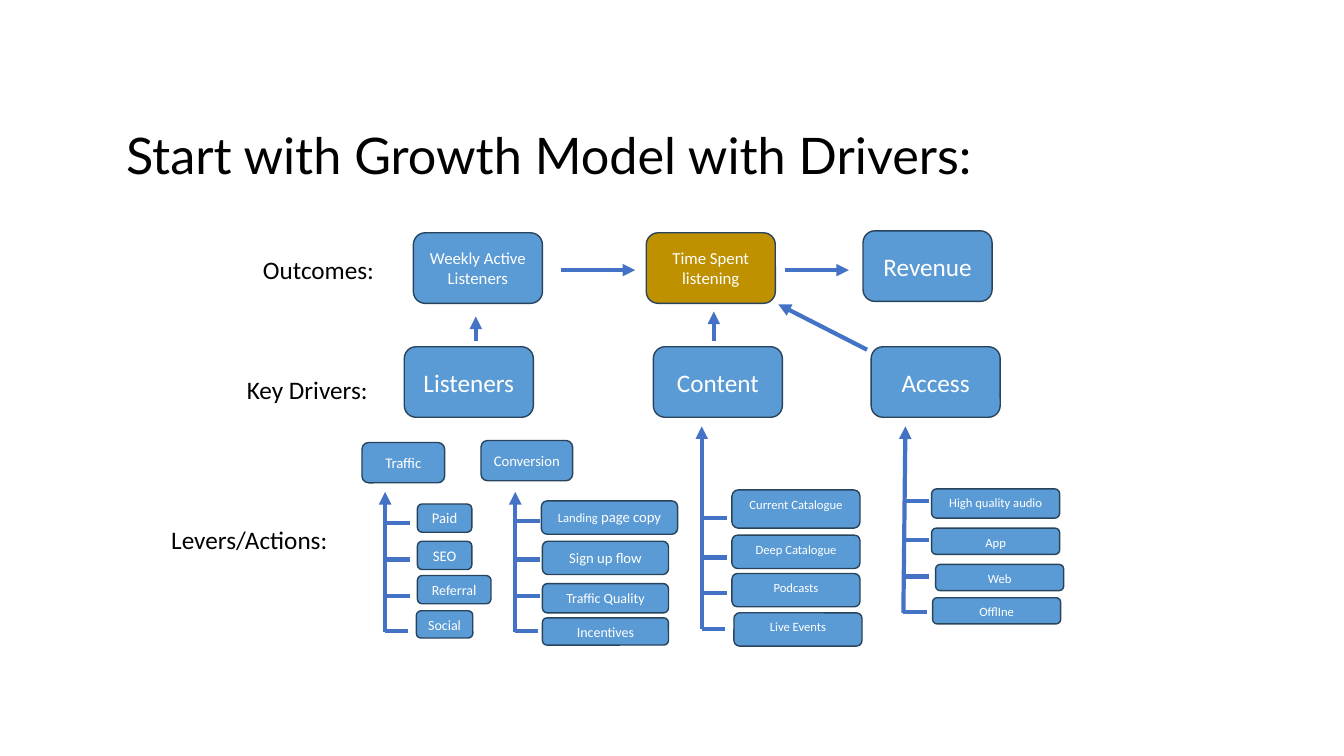
from dataclasses import dataclass

from lxml import etree
from pptx import Presentation
from pptx.dml.color import RGBColor
from pptx.enum.shapes import MSO_CONNECTOR, MSO_SHAPE
from pptx.enum.text import MSO_ANCHOR, MSO_AUTO_SIZE, PP_ALIGN
from pptx.oxml.ns import qn
from pptx.util import Pt

PX = 9144
BLUE = RGBColor(0x5B, 0x9B, 0xD5)
GOLD = RGBColor(0xBF, 0x90, 0x00)
EDGE = RGBColor(0x28, 0x44, 0x5D)
ARROW = RGBColor(0x44, 0x72, 0xC4)
WHITE = RGBColor(0xFF, 0xFF, 0xFF)
BLACK = RGBColor(0x00, 0x00, 0x00)
ROUNDED, STRAIGHT = MSO_SHAPE.ROUNDED_RECTANGLE, MSO_CONNECTOR.STRAIGHT
TOP, MIDDLE, BOTTOM = MSO_ANCHOR.TOP, MSO_ANCHOR.MIDDLE, MSO_ANCHOR.BOTTOM
LEFT, CENTER = PP_ALIGN.LEFT, PP_ALIGN.CENTER
NO_FIT = MSO_AUTO_SIZE.NONE
STUB = 23

Runs = list[tuple[str, float]]


@dataclass
class Box:
    runs: Runs
    x: int
    y: int
    w: int
    h: int
    anchor: MSO_ANCHOR = MIDDLE
    fill: RGBColor = BLUE


@dataclass
class Label:
    text: str
    x: int
    y: int
    w: int


@dataclass
class Line:
    x1: int
    y1: int
    x2: int
    y2: int
    arrow: bool = True


@dataclass
class Rail:
    foot_x: int
    foot_y: int
    head_x: int
    head_y: int
    stubs: list[int]


def driver(text: str, x: int, y: int, size: float = 18, fill: RGBColor = BLUE) -> Box:
    return Box([(text, size)], x, y, 128, 70, fill=fill)


def lever(text: str, x: int, y: int, h: int) -> Box:
    return Box([(text, 9)], x, y, 127, h, TOP)


BOXES = [
    driver("Listeners", 401, 344),
    driver("Content", 648, 344),
    driver("Access", 864, 344),
    driver("Weekly Active Listeners", 410, 231, 12),
    driver("Time Spent listening", 641, 231, 12, GOLD),
    driver("Revenue", 856, 229),
    Box([("Traffic", 10.5)], 359, 439, 82, 40),
    Box([("Conversion", 10.5)], 477, 437, 91, 40),
    Box([("Paid", 10.5)], 414, 500, 54, 28),
    Box([("SEO", 10.5)], 414, 537, 54, 28),
    Box([("Referra", 10), ("l", 10.5)], 414, 571, 73, 28),
    Box([("Social", 10)], 413, 606, 56, 27),
    Box([("Landing", 9), (" page copy", 10.5)], 537, 497, 135, 33, TOP),
    Box([("Sign up flow", 10.5)], 538, 537, 125, 33),
    Box([("Traffic Quality", 10)], 538, 579, 125, 29),
    Box([("Incentives", 10)], 538, 613, 125, 27),
    lever("Current Catalogue", 726, 486, 38),
    lever("Deep Catalogue", 726, 531, 33),
    lever("Podcasts", 726, 569, 33),
    lever("Live Events", 728, 608, 33),
    lever("High quality audio", 924, 485, 29),
    lever("App", 924, 524, 26),
    lever("Web", 928, 560, 26),
    lever("OfflIne", 925, 593, 26),
]
LABELS = [
    Label("Outcomes:", 251, 247, 132),
    Label("Key Drivers:", 235, 366, 141),
    Label("Levers/Actions:", 160, 515, 192),
]
ARROWS = [
    Line(556, 268, 630, 268),
    Line(779, 268, 842, 268),
    Line(472, 338, 472, 314),
    Line(708, 338, 708, 309),
    Line(860, 347, 772, 302),
]
RAILS = [
    Rail(382, 627, 382, 488, [519, 555, 591, 626]),
    Rail(511, 627, 511, 488, [517, 555, 591, 626]),
    Rail(696, 624, 696, 423, [514, 553, 588, 624]),
    Rail(896, 608, 898, 423, [497, 536, 572, 607]),
]


def write(tf, runs: Runs, *, font: str = "Calibri", color: RGBColor = WHITE,
          align: PP_ALIGN = CENTER, anchor: MSO_ANCHOR = MIDDLE,
          wrap: bool = True, spacing: float = 1.0) -> None:
    tf.auto_size = NO_FIT
    tf.word_wrap = wrap
    tf.vertical_anchor = anchor
    p = tf.paragraphs[0]
    p.alignment = align
    p.line_spacing = spacing
    for text, size in runs:
        r = p.add_run()
        r.text = text
        r.font.name = font
        r.font.size = Pt(size)
        r.font.color.rgb = color


def add_box(s, box: Box) -> None:
    sp = s.shapes.add_shape(ROUNDED, box.x * PX, box.y * PX, box.w * PX, box.h * PX)
    sp.shadow.inherit = False
    sp.fill.solid()
    sp.fill.fore_color.rgb = box.fill
    sp.line.color.rgb = EDGE
    sp.line.width = Pt(1)
    write(sp.text_frame, box.runs, anchor=box.anchor)


def add_label(s, label: Label) -> None:
    sp = s.shapes.add_textbox(label.x * PX, label.y * PX, label.w * PX, 40 * PX)
    write(sp.text_frame, [(label.text, 18)], color=BLACK, align=LEFT,
          anchor=TOP, wrap=False)


def add_line(s, line: Line) -> None:
    sp = s.shapes.add_connector(STRAIGHT, line.x1 * PX, line.y1 * PX,
                                line.x2 * PX, line.y2 * PX)
    sp.line.color.rgb = ARROW
    sp.line.width = Pt(3)
    props = sp._element.spPr
    if line.arrow:
        etree.SubElement(props.find(qn("a:ln")), qn("a:tailEnd"), type="triangle")
    etree.SubElement(props, qn("a:effectLst"))


def add_rail(s, rail: Rail) -> None:
    add_line(s, Line(rail.foot_x, rail.foot_y, rail.head_x, rail.head_y))
    for y in rail.stubs:
        x = rail.foot_x + (0 if y == rail.stubs[-1] else 2)
        add_line(s, Line(x, y, x + STUB, y, arrow=False))


def add_title(s, text: str) -> None:
    sp = s.shapes.title
    sp.left, sp.top, sp.width, sp.height = 115 * PX, 22 * PX, 1058 * PX, 167 * PX
    write(sp.text_frame, [(text, 36)], font="Lato", color=BLACK, align=LEFT,
          anchor=BOTTOM, spacing=0.9)


def main() -> None:
    prs = Presentation()
    prs.slide_width, prs.slide_height = 1333 * PX, 750 * PX
    s = prs.slides.add_slide(prs.slide_layouts[5])
    add_title(s, "Start with Growth Model with Drivers:")
    for label in LABELS:
        add_label(s, label)
    for rail in RAILS:
        add_rail(s, rail)
    for box in BOXES:
        add_box(s, box)
    for line in ARROWS:
        add_line(s, line)
    prs.save("out.pptx")


if __name__ == "__main__":
    main()
